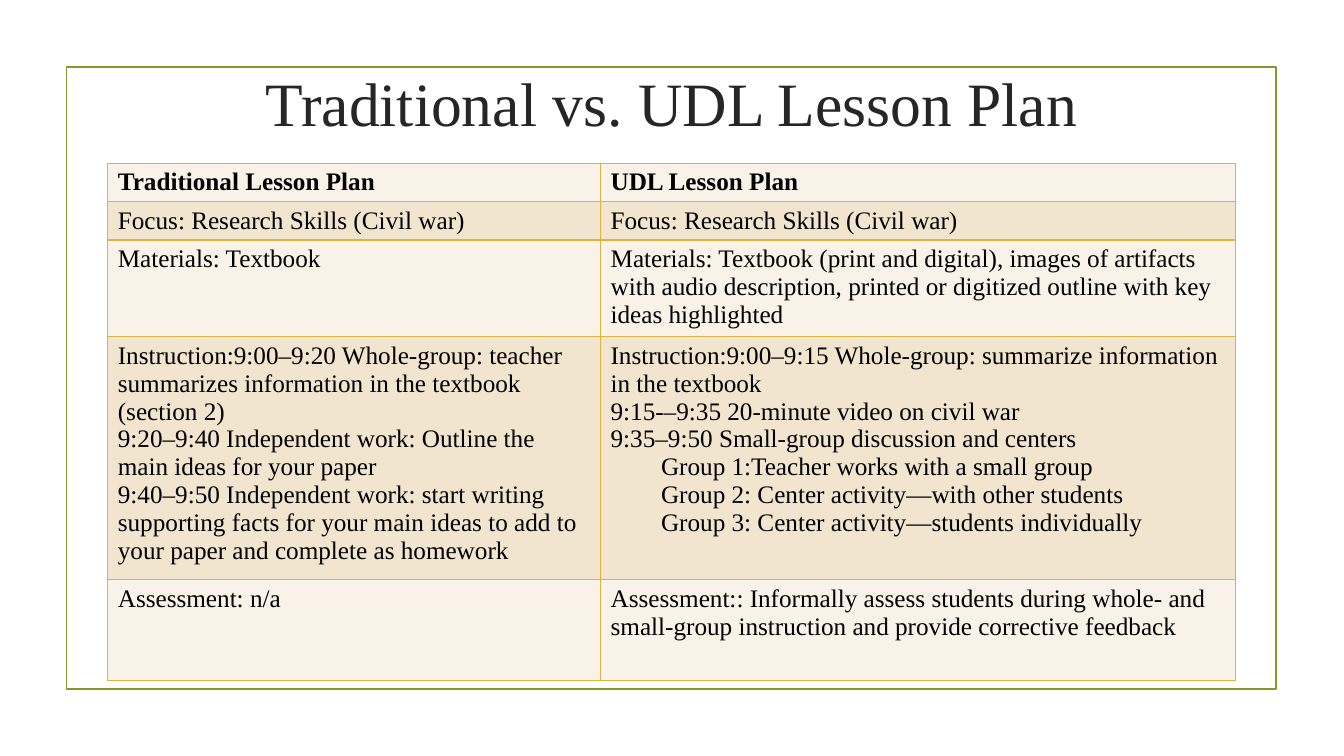
from lxml.etree import SubElement
from pptx import Presentation
from pptx.dml.color import RGBColor
from pptx.enum.shapes import MSO_SHAPE
from pptx.enum.text import MSO_ANCHOR, PP_ALIGN
from pptx.oxml.ns import qn
from pptx.util import Pt

# Content: one (traditional, UDL) pair per row; a cell is a list of (text, level)
TITLE = "Traditional vs. UDL Lesson Plan"
ROWS = [
    ([("Traditional Lesson Plan", 0)], [("UDL Lesson Plan", 0)]),
    ([("Focus: Research Skills (Civil war)", 0)],
     [("Focus: Research Skills (Civil war)", 0)]),
    ([("Materials: Textbook", 0)],
     [("Materials: Textbook (print and digital), images of artifacts with audio "
       "description, printed or digitized outline with key ideas highlighted", 0)]),
    ([("Instruction:9:00–9:20 Whole-group: teacher summarizes information in the "
       "textbook (section 2)", 0),
      ("9:20–9:40 Independent work: Outline the main ideas for your paper", 0),
      ("9:40–9:50 Independent work: start writing supporting facts for your main "
       "ideas to add to your paper and complete as homework", 0)],
     [("Instruction:9:00–9:15 Whole-group: summarize information in the textbook", 0),
      ("9:15-–9:35 20-minute video on civil war", 0),
      ("9:35–9:50 Small-group discussion and centers", 0),
      ("Group 1:Teacher works with a small group", 1),
      ("Group 2: Center activity—with other students", 1),
      ("Group 3: Center activity—students individually", 1)]),
    ([("Assessment: n/a", 0)],
     [("Assessment:: Informally assess students during whole- and small-group "
       "instruction and provide corrective feedback", 0)]),
]
COL_WIDTHS = [352, 453.5]
ROW_HEIGHTS = [27.5, 27.5, 69, 173.5, 72]
COLORS = {"frame": "83992A", "title": "262626", "text": "000000",
          "border": "DEB340", "light": "F9F2E8", "dark": "F2E5CF"}
FONT = "Times New Roman"


def write(p, text, size=18, color="text", bold=False, align=PP_ALIGN.LEFT, level=0):
    p.alignment = align
    if level:
        p.level = level
        pPr = p._p.get_or_add_pPr()
        pPr.set("marL", str(Pt(36 * level)))
        pPr.set("indent", "0")
    r = p.add_run()
    r.text = text
    r.font.name, r.font.size, r.font.bold = FONT, Pt(size), bold
    r.font.color.rgb = RGBColor.from_string(COLORS[color])


def set_borders(cell):
    tcPr = cell._tc.get_or_add_tcPr()
    for i, side in enumerate(("lnL", "lnR", "lnT", "lnB")):
        ln = tcPr.makeelement(qn("a:" + side), {"w": str(Pt(1))})
        fill = SubElement(ln, qn("a:solidFill"))
        SubElement(fill, qn("a:srgbClr"), val=COLORS["border"])
        tcPr.insert(i, ln)


prs = Presentation()
prs.slide_width, prs.slide_height = Pt(960), Pt(540)
s = prs.slides.add_slide(prs.slide_layouts[5])

# Frame
frame = s.shapes.add_shape(MSO_SHAPE.RECTANGLE, Pt(47.5), Pt(48), Pt(864), Pt(444))
frame.shadow.inherit = False
frame.fill.background()
frame.line.color.rgb = RGBColor.from_string(COLORS["frame"])
frame.line.width = Pt(1.25)

# Title
title = s.shapes.title
title.left, title.top, title.width, title.height = Pt(102), Pt(39), Pt(756), Pt(67)
tf = title.text_frame
tf.vertical_anchor = MSO_ANCHOR.MIDDLE
write(tf.paragraphs[0], TITLE, size=44, color="title", align=PP_ALIGN.CENTER)

# Lesson plan table
table = s.shapes.add_table(len(ROWS), len(COL_WIDTHS), Pt(77), Pt(116.5),
                           Pt(sum(COL_WIDTHS)), Pt(sum(ROW_HEIGHTS))).table
for col, width in zip(table.columns, COL_WIDTHS):
    col.width = Pt(width)
for i, (row, height) in enumerate(zip(ROWS, ROW_HEIGHTS)):
    table.rows[i].height = Pt(height)
    for j, lines in enumerate(row):
        cell = table.cell(i, j)
        cell.fill.solid()
        cell.fill.fore_color.rgb = RGBColor.from_string(COLORS["dark" if i % 2 else "light"])
        set_borders(cell)
        tf = cell.text_frame
        for k, (text, level) in enumerate(lines):
            p = tf.add_paragraph() if k else tf.paragraphs[0]
            write(p, text, bold=i == 0, level=level)

prs.save("out.pptx")
